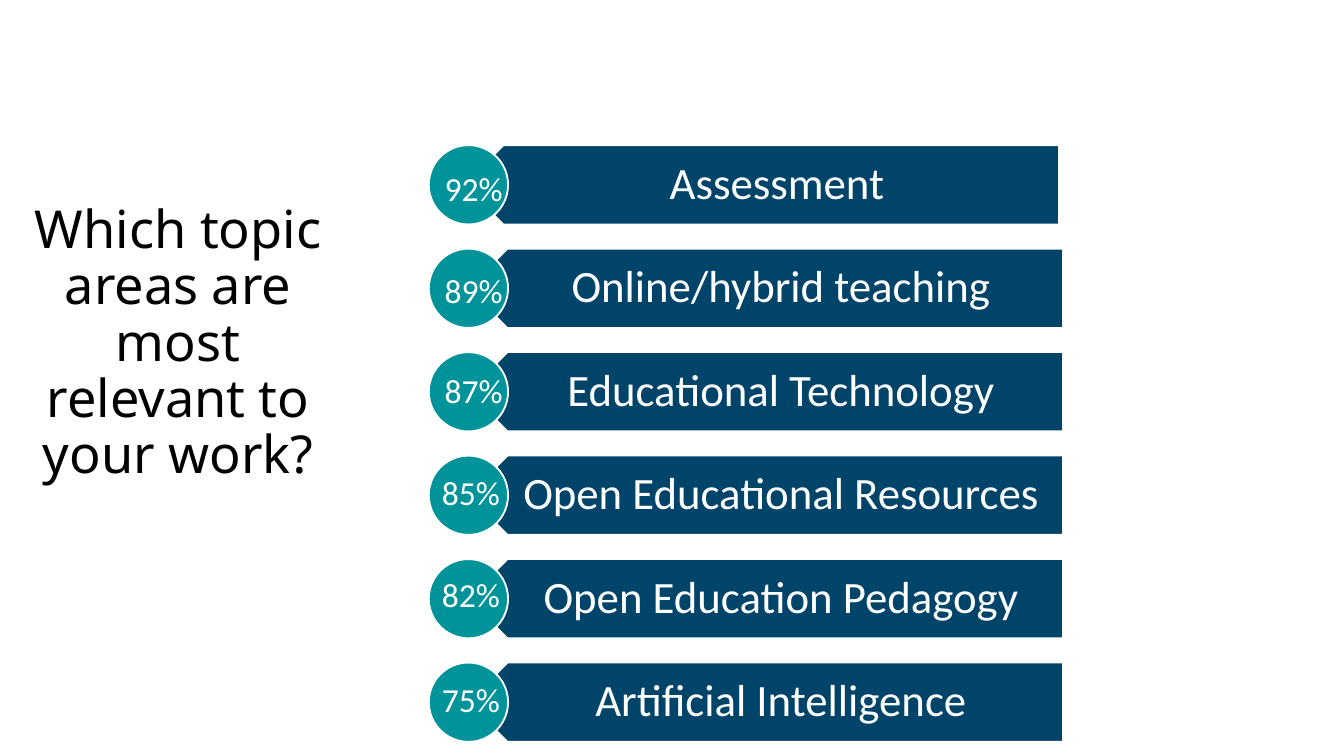
from pptx import Presentation
from pptx.dml.color import RGBColor
from pptx.enum.shapes import MSO_SHAPE
from pptx.enum.text import MSO_ANCHOR, PP_ALIGN
from pptx.util import Inches, Pt

COLORS = {"bar": "00446A", "disc": "00949A", "white": "FFFFFF", "black": "000000"}

# Row grid, in inches
TOP, PITCH, SIZE = 1.08, 0.77, 0.59
DISC_X, BAR_X, BAR_W = 3.19, 3.48, 4.43
INDENT = 0.15

# topic, share, bar shift, left and top of the share
TOPICS = [
    ("Assessment", "92%", -0.03, 3.21, 1.2),
    ("Online/hybrid teaching", "89%", 0, 3.21, 1.96),
    ("Educational Technology", "87%", 0, 3.21, 2.7),
    ("Open Educational Resources", "85%", 0, 3.19, 3.46),
    ("Open Education Pedagogy", "82%", 0, 3.19, 4.22),
    ("Artificial Intelligence", "75%", 0, 3.19, 5),
]


def color(name):
    return RGBColor.from_string(COLORS[name])


def add_form(slide, kind, box, fill):
    form = slide.shapes.add_shape(kind, *map(Inches, box))
    form.shadow.inherit = False
    form.fill.solid()
    form.fill.fore_color.rgb = color(fill)
    form.line.color.rgb = color("white")
    form.line.width = Pt(1)
    return form


def add_text(slide, box, text, size, font="Calibri", ink="white", wrap=True,
             align=PP_ALIGN.CENTER, anchor=MSO_ANCHOR.MIDDLE, space=0.9):
    frame = slide.shapes.add_textbox(*map(Inches, box)).text_frame
    frame.word_wrap = wrap
    frame.vertical_anchor = anchor
    para = frame.paragraphs[0]
    para.alignment = align
    para.line_spacing = space
    run = para.add_run()
    run.text = text
    run.font.size = Pt(size)
    run.font.name = font
    run.font.color.rgb = color(ink)
    return frame


def add_topic(slide, row, topic, share, shift, left, top):
    """Draw one row: a bar pointing left, its label, and a disc with the share."""
    y, x = TOP + row * PITCH, BAR_X + shift
    bar = add_form(slide, MSO_SHAPE.PENTAGON, (x, y, BAR_W, SIZE), "bar")
    bar.rotation = 180
    label = add_text(slide, (x + INDENT, y, BAR_W - INDENT, SIZE), topic, 24)
    label.margin_left, label.margin_right = Inches(0.24), Inches(0.16)
    label.margin_top = label.margin_bottom = Inches(0.1)
    add_form(slide, MSO_SHAPE.OVAL, (DISC_X, y, SIZE, SIZE), "disc")
    add_text(slide, (left, top, 0.64, 0.4), share, 18, wrap=False,
             align=PP_ALIGN.LEFT, anchor=MSO_ANCHOR.TOP, space=1.0)


def main():
    deck = Presentation()
    deck.slide_width = Inches(10)
    deck.slide_height = deck.slide_width * 9 // 16
    slide = deck.slides.add_slide(deck.slide_layouts[6])
    add_text(slide, (0.11, 0.21, 2.43, 3.45),
             "Which topic areas are most relevant to your work?", 28,
             font="Noto Sans", ink="black", anchor=MSO_ANCHOR.BOTTOM)
    for row, topic in enumerate(TOPICS):
        add_topic(slide, row, *topic)
    deck.save("out.pptx")


if __name__ == "__main__":
    main()
